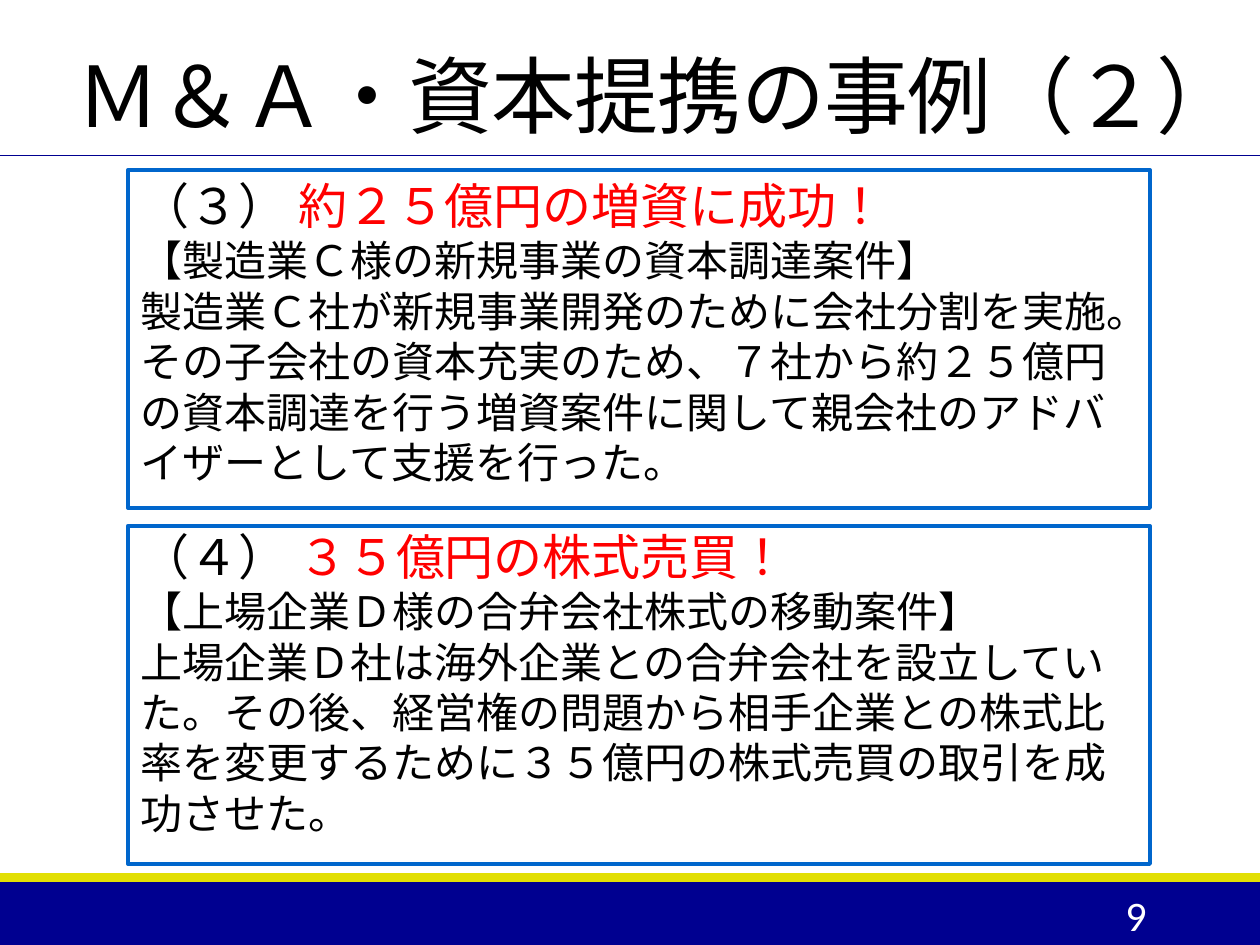
from pptx import Presentation
from pptx.dml.color import RGBColor
from pptx.enum.lang import MSO_LANGUAGE_ID
from pptx.enum.shapes import MSO_CONNECTOR, MSO_SHAPE
from pptx.enum.text import MSO_ANCHOR, PP_ALIGN
from pptx.oxml.ns import qn
from pptx.util import Pt
from lxml.etree import SubElement

PX = 914400 / 126  # EMU in one px
FONT = "Calibri"
HUES = {"navy": "000090", "gold": "E2DF04", "blue": "0066CC",
        "red": "FF0000", "black": "000000", "white": "FFFFFF"}

CASES = [
    # top, top inset, number, headline, client, story
    (170, 6, "（３） ", "約２５億円の増資に成功！",
     "【製造業Ｃ様の新規事業の資本調達案件】",
     "製造業Ｃ社が新規事業開発のために会社分割を実施。その子会社の資本充実のため、"
     "７社から約２５億円の資本調達を行う増資案件に関して親会社のアドバイザーとして支援を行った。"),
    (526, 1, "（４） ", "３５億円の株式売買！",
     "【上場企業Ｄ様の合弁会社株式の移動案件】",
     "上場企業Ｄ社は海外企業との合弁会社を設立していた。その後、経営権の問題から"
     "相手企業との株式比率を変更するために３５億円の株式売買の取引を成功させた。"),
]


def px(*nums):
    return [round(n * PX) for n in nums]


def hue(name):
    return RGBColor.from_string(HUES[name])


def style(item, values):
    for key, value in values.items():
        setattr(item, key, value)


def add_run(para, text, size, color="black"):
    run = para.add_run()
    run.text = text
    style(run.font, {"name": FONT, "size": Pt(size),
                     "language_id": MSO_LANGUAGE_ID.JAPANESE})
    run.font.color.rgb = hue(color)
    # East Asian glyphs take the same font
    SubElement(run.font._element, qn("a:ea")).set("typeface", FONT)
    return run


def add_box(slide, kind, place, fill, edge=None):
    box = slide.shapes.add_shape(kind, *px(*place))
    box.shadow.inherit = False
    box.fill.solid()
    box.fill.fore_color.rgb = hue(fill)
    if edge:
        box.line.color.rgb = hue(edge)
        box.line.width = Pt(2.25)
    else:
        box.line.fill.background()
    return box


def add_rule(slide, y):
    rule = slide.shapes.add_connector(MSO_CONNECTOR.STRAIGHT, *px(0, y, 1260, y))
    rule.line.color.rgb = hue("navy")
    rule.line.width = Pt(0.5)
    SubElement(rule._element.spPr, qn("a:effectLst"))


def add_text(slide, place, text, size, color, values, align):
    frame = slide.shapes.add_textbox(*px(*place)).text_frame
    style(frame, {"word_wrap": True, **values})
    para = frame.paragraphs[0]
    para.alignment = align
    return para, add_run(para, text, size, color)


def add_case(slide, top, inset, number, head, client, story):
    box = add_box(slide, MSO_SHAPE.FLOWCHART_PROCESS,
                  (128, top, 1022, 338), "white", "blue")
    frame = box.text_frame
    style(frame, {"word_wrap": True, "vertical_anchor": MSO_ANCHOR.TOP,
                  "margin_top": px(inset)[0]})
    lines = [[(number, 28, "black"), (head, 28, "red")],
             [(client, 24)], [(story, 24)]]
    for i, parts in enumerate(lines):
        para = frame.add_paragraph() if i else frame.paragraphs[0]
        para.alignment = PP_ALIGN.LEFT
        for part in parts:
            add_run(para, *part)


def main():
    deck = Presentation()
    deck.slide_width, deck.slide_height = px(1260, 945)
    slide = deck.slides.add_slide(deck.slide_layouts[6])

    # Footer bands and title rule
    add_box(slide, MSO_SHAPE.RECTANGLE, (0, 882, 1260, 63), "navy")
    add_box(slide, MSO_SHAPE.RECTANGLE, (0, 873, 1260, 9), "gold")
    add_rule(slide, 155)

    # Page number and title, which needs the full width for one line
    add_text(slide, (1023, 890, 136, 50), "9", 24, "white",
             {"vertical_anchor": MSO_ANCHOR.MIDDLE}, PP_ALIGN.RIGHT)
    para, run = add_text(slide, (64, 35, 1190, 116), "Ｍ＆Ａ・資本提携の事例（２）",
                         48, "black",
                         {"vertical_anchor": MSO_ANCHOR.BOTTOM, "margin_right": 0},
                         PP_ALIGN.LEFT)
    para.line_spacing = 0.85
    run.font._element.set("spc", "-50")

    # Case boxes
    for case in CASES:
        add_case(slide, *case)

    deck.save("out.pptx")


if __name__ == "__main__":
    main()
